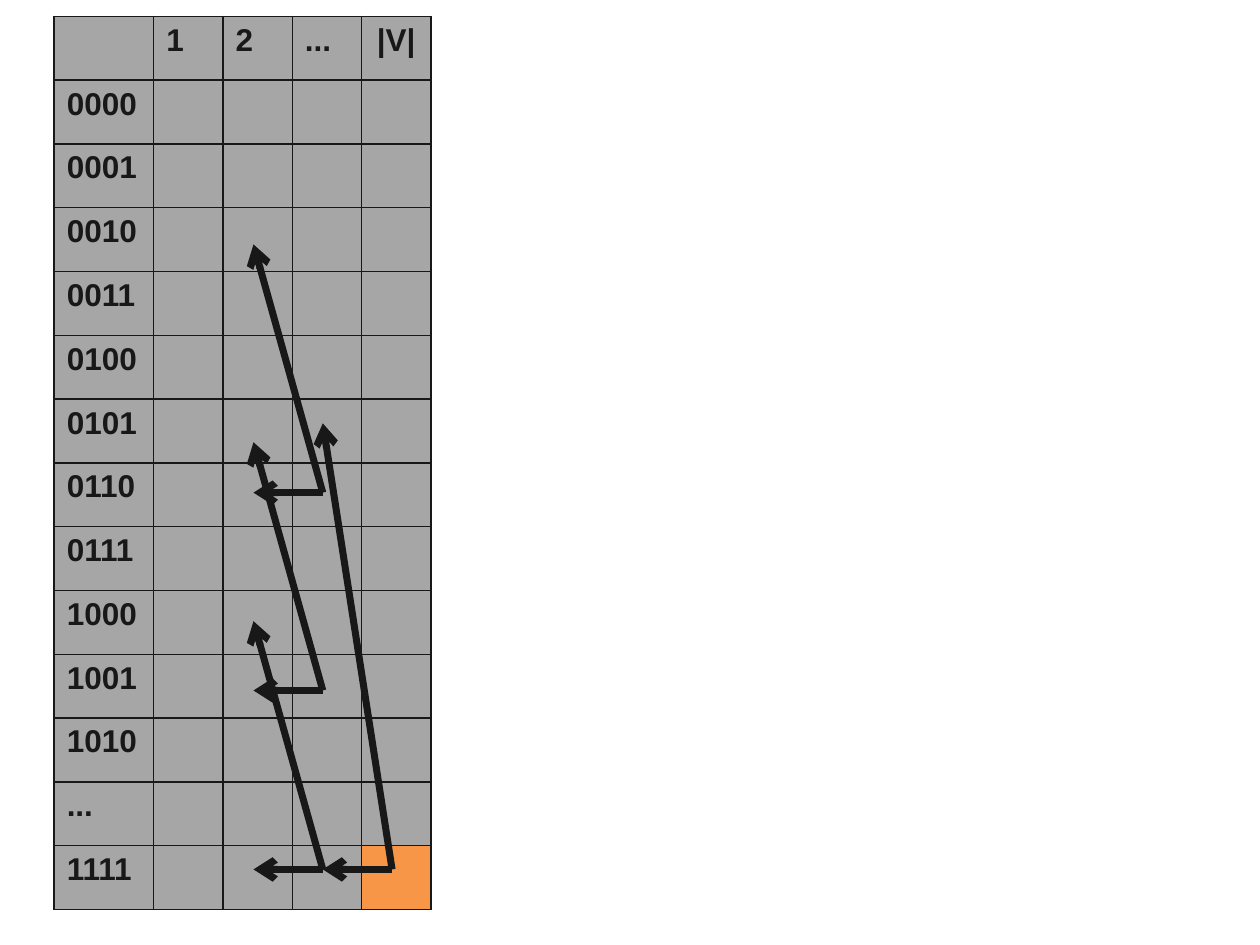
from lxml.etree import SubElement
from pptx import Presentation
from pptx.dml.color import RGBColor
from pptx.enum.shapes import MSO_CONNECTOR
from pptx.enum.text import PP_ALIGN
from pptx.oxml.ns import qn
from pptx.util import Inches, Pt

INK, GREY, ORANGE = "181818", "A6A6A6", "F79646"

# Grid of the table, in inches
LEFT, TOP = 0.43, 0.13
LABEL_W, COL_W = 0.79, 0.55
TABLE_H = 7.09

HEADINGS = ["", "1", "2", "...", "|V|"]
SUBSETS = [f"{number:04b}" for number in range(11)] + ["...", "1111"]

# Each step: start column, row height on the slide, height of the upper target
STEPS = [(4, 6.9, 3.36), (3, 6.9, 4.93), (3, 5.48, 3.51), (3, 3.91, 1.94)]


def color(hex_string):
    return RGBColor.from_string(hex_string)


def add_borders(cell):
    properties = cell._tc.get_or_add_tcPr()
    for side in ("a:lnL", "a:lnR", "a:lnT", "a:lnB"):
        border = SubElement(properties, qn(side), w=str(Pt(1)))
        fill = SubElement(border, qn("a:solidFill"))
        SubElement(fill, qn("a:srgbClr"), val=INK)


def format_cell(cell, text, fill):
    add_borders(cell)
    cell.fill.solid()
    cell.fill.fore_color.rgb = color(fill)
    if text:
        run = cell.text_frame.paragraphs[0].add_run()
        run.text = text
        font = run.font
        font.name, font.size, font.bold = "Arial", Pt(18), True
        font.color.rgb = color(INK)


def add_subset_table(slide):
    rows = [HEADINGS] + [[subset, "", "", "", ""] for subset in SUBSETS]
    widths = [LABEL_W] + [COL_W] * (len(HEADINGS) - 1)
    table = slide.shapes.add_table(
        len(rows), len(widths), Inches(LEFT), Inches(TOP),
        Inches(sum(widths)), Inches(TABLE_H)).table
    for column, width in zip(table.columns, widths):
        column.width = Inches(width)
    for r, texts in enumerate(rows):
        table.rows[r].height = Inches(TABLE_H / len(rows))
        for c, text in enumerate(texts):
            is_goal = r == len(rows) - 1 and c == len(widths) - 1
            format_cell(table.cell(r, c), text, ORANGE if is_goal else GREY)
    table.cell(0, len(widths) - 1).text_frame.paragraphs[0].alignment = PP_ALIGN.CENTER


def column_x(column):
    return LEFT + LABEL_W + COL_W * (column - 0.56)


def add_arrow(slide, start_column, start_y, end_y):
    arrow = slide.shapes.add_connector(
        MSO_CONNECTOR.STRAIGHT,
        Inches(column_x(start_column)), Inches(start_y),
        Inches(column_x(start_column - 1)), Inches(end_y))
    arrow.line.color.rgb = color(INK)
    arrow.line.width = Pt(4)
    SubElement(arrow.line._get_or_add_ln(), qn("a:tailEnd"), type="arrow")
    SubElement(arrow._element.spPr, qn("a:effectLst"))


def main():
    deck = Presentation()
    deck.slide_width, deck.slide_height = Inches(10), Inches(7.5)
    slide = deck.slides.add_slide(deck.slide_layouts[6])

    add_subset_table(slide)

    # Every step goes to the previous column: same row, and a smaller subset
    for column, y, upper_y in STEPS:
        add_arrow(slide, column, y, y)
        add_arrow(slide, column, y, upper_y)

    deck.save("out.pptx")


if __name__ == "__main__":
    main()
